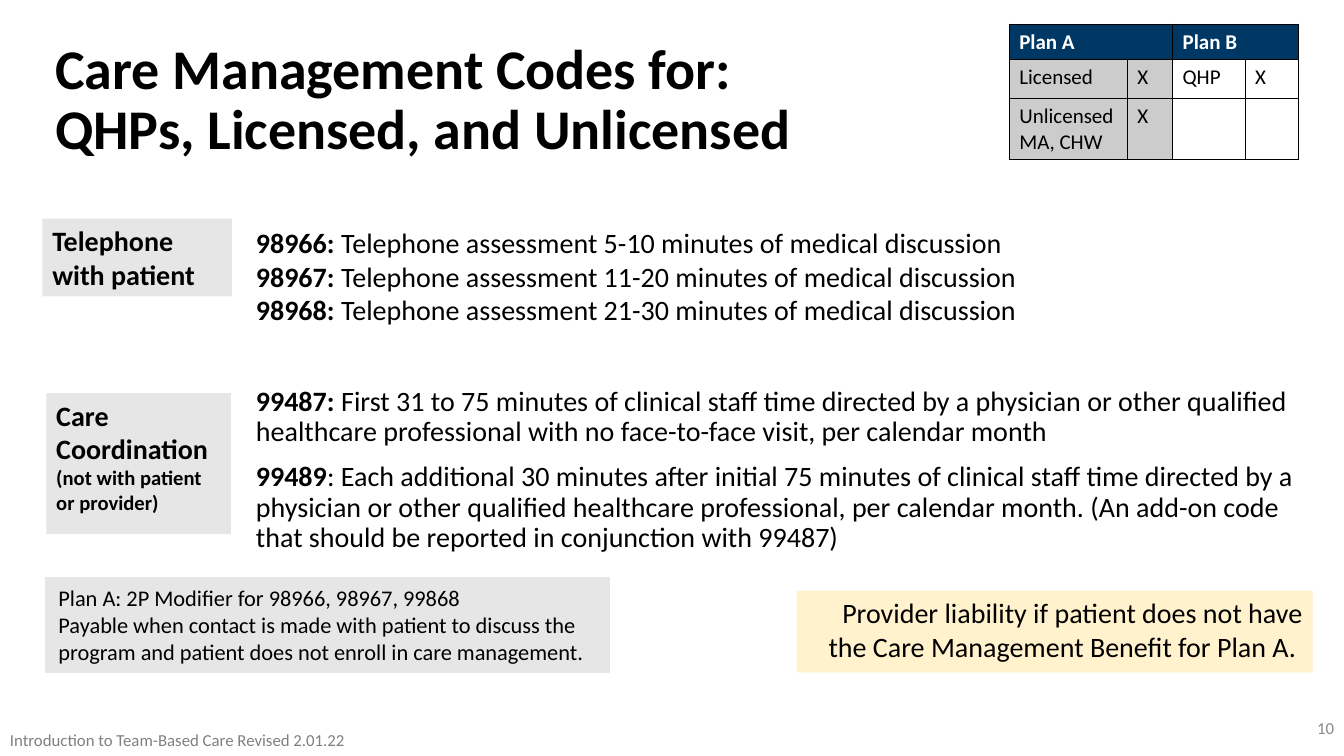
"""Build the care management codes slide."""
import pptx
import pptx.dml.color
import pptx.enum.shapes
import pptx.enum.text
import pptx.oxml
import pptx.oxml.ns
import pptx.util

BLACK, WHITE, GREY, NAVY = "000000", "FFFFFF", "E7E6E6", "003865"
SILVER, CREAM = "CCCCCC", "FFF2CC"
RIGHT = pptx.enum.text.PP_ALIGN.RIGHT
MIDDLE = pptx.enum.text.MSO_ANCHOR.MIDDLE


def px(n):
    """Turn px, 100 to the inch, into EMU."""
    return pptx.util.Emu(n * 9144)


def rgb(value):
    """Turn a hex string into a colour."""
    return pptx.dml.color.RGBColor.from_string(value)


class Deck:
    """Hold the style and the current slide."""

    font = "Calibri"

    def __init__(self, width, height):
        """Start a deck with one blank slide."""
        self.prs = pptx.Presentation()
        self.prs.slide_width, self.prs.slide_height = px(width), px(height)
        self.s = self.prs.slides.add_slide(self.prs.slide_layouts[6])

    def style(self, p, size, color=BLACK, bold=False):
        """Set the font of a paragraph."""
        p.font.name, p.font.size, p.font.bold = self.font, pptx.util.Pt(size), bold
        p.font.color.rgb = rgb(color)

    def fill_text(self, tf, paragraphs, size, color=BLACK, bold=False,
                  align=pptx.enum.text.PP_ALIGN.LEFT, spacing=1.0,
                  anchor=pptx.enum.text.MSO_ANCHOR.TOP, margins=(10, 5)):
        """Fill in paragraphs, each a string or a list of (text, font settings)."""
        tf.word_wrap, tf.vertical_anchor = True, anchor
        tf.margin_left = tf.margin_right = px(margins[0])
        tf.margin_top = tf.margin_bottom = px(margins[1])
        for i, runs in enumerate(paragraphs):
            p = tf.add_paragraph() if i else tf.paragraphs[0]
            self.style(p, size, color, bold)
            p.alignment, p.line_spacing = align, spacing
            for text, settings in [(runs, {})] if isinstance(runs, str) else runs:
                r = p.add_run()
                r.text = text
                r.font.bold = settings.get("bold")
                r.font.size = settings.get("size")

    def text(self, box, paragraphs, size, **style):
        """Add a text box and return its text frame."""
        tf = self.s.shapes.add_textbox(*map(px, box)).text_frame
        self.fill_text(tf, paragraphs, size, **style)
        return tf

    def panel(self, box, fill, paragraphs, size, line=None, **style):
        """Add a filled rectangle with text."""
        sp = self.s.shapes.add_shape(
            pptx.enum.shapes.MSO_SHAPE.RECTANGLE, *map(px, box))
        sp.shadow.inherit = False
        sp.fill.solid()
        sp.fill.fore_color.rgb = rgb(fill)
        if line:
            sp.line.color.rgb, sp.line.width = rgb(line), pptx.util.Pt(0.75)
        else:
            sp.line.fill.background()
        self.fill_text(sp.text_frame, paragraphs, size, **style)

    def border(self, cell):
        """Draw a thin black line on each side of a cell."""
        tcPr = cell._tc.get_or_add_tcPr()
        for i, side in enumerate(("lnL", "lnR", "lnT", "lnB")):
            tcPr.insert(i, pptx.oxml.parse_xml(
                f'<a:{side} {pptx.oxml.ns.nsdecls("a")} w="12700"><a:solidFill>'
                f'<a:srgbClr val="{BLACK}"/></a:solidFill></a:{side}>'))

    def table(self, box, cols, rows, values, size):
        """Add a table whose header cells each span two columns."""
        t = self.s.shapes.add_table(len(rows), len(cols), *map(px, box)).table
        t.first_row = t.horz_banding = False
        for col, width in zip(t.columns, cols):
            col.width = px(width)
        for row, height in zip(t.rows, rows):
            row.height = px(height)
        for i, line in enumerate(values):
            for j, value in enumerate(line):
                cell, head = t.cell(i, j), i == 0
                cell.fill.solid()
                cell.fill.fore_color.rgb = rgb(
                    NAVY if head else SILVER if j < 2 else WHITE)
                self.border(cell)
                self.fill_text(cell.text_frame, value.split("\n") if value else [],
                               size, color=WHITE if head else BLACK, bold=head)
        for j in range(0, len(cols), 2):
            t.cell(0, j).merge(t.cell(0, j + 1))


def main():
    """Build and save the slide."""
    deck = Deck(1333, 750)
    bold = {"bold": True}
    calls = [[(f"{code}:", bold),
              (f" Telephone assessment {span} minutes of medical discussion", {})]
             for code, span in (("98966", "5-10"), ("98967", "11-20"), ("98968", "21-30"))]
    coordination = [
        [("99487:", bold),
         (" First 31 to 75 minutes of clinical staff time directed by a physician or "
          "other qualified healthcare professional with no face-to-face visit, per "
          "calendar month", {})],
        [("99489", bold),
         (": Each additional 30 minutes after initial 75 minutes of clinical staff time "
          "directed by a physician or other qualified healthcare professional, per "
          "calendar month. (An add-on code that should be reported in conjunction with "
          "99487)", {})]]
    tf = deck.text((244, 219, 1059, 366), calls + coordination, 20)
    for p, gap in zip(tf.paragraphs[len(calls):], (43.4, 10.7)):
        p.line_spacing, p.space_before = 0.9, pptx.util.Pt(gap)

    deck.text((45, 40, 811, 121),
              ["Care Management Codes for: QHPs, Licensed, and Unlicensed"], 40,
              bold=True, spacing=0.9, anchor=MIDDLE)
    deck.panel((42, 217, 188, 77), GREY, ["Telephone with patient"], 20, bold=True)
    deck.panel((46, 390, 183, 140), GREY,
               [[("Care Coordination ", {}),
                 ("(not with patient or provider)", {"size": pptx.util.Pt(14.7)})]],
               20, bold=True)
    deck.table((1001, 24, 287, 132), (117, 45, 72, 53), (34, 39, 59),
               (("Plan A", "", "Plan B", ""),
                ("Licensed", "X", "QHP", "X"),
                ("Unlicensed\nMA, CHW", "X", "", "")), 15)
    deck.panel((790, 586, 512, 81), CREAM,
               ["Provider liability if patient does not have the Care Management "
                "Benefit for Plan A. "], 20, align=RIGHT)
    deck.panel((45, 573, 560, 94), GREY,
               ["Plan A: 2P Modifier for 98966, 98967, 99868",
                "Payable when contact is made with patient to discuss the program and "
                "patient does not enroll in care management."],
               16, line=GREY, margins=(13, 7))
    deck.text((0, 719, 525, 30), ["Introduction to Team-Based Care Revised 2.01.22"],
              12, color="808080")
    deck.text((1033, 709, 300, 40), ["10"], 12, color="898989", align=RIGHT, spacing=0.9)
    deck.prs.save("out.pptx")


if __name__ == "__main__":
    main()
